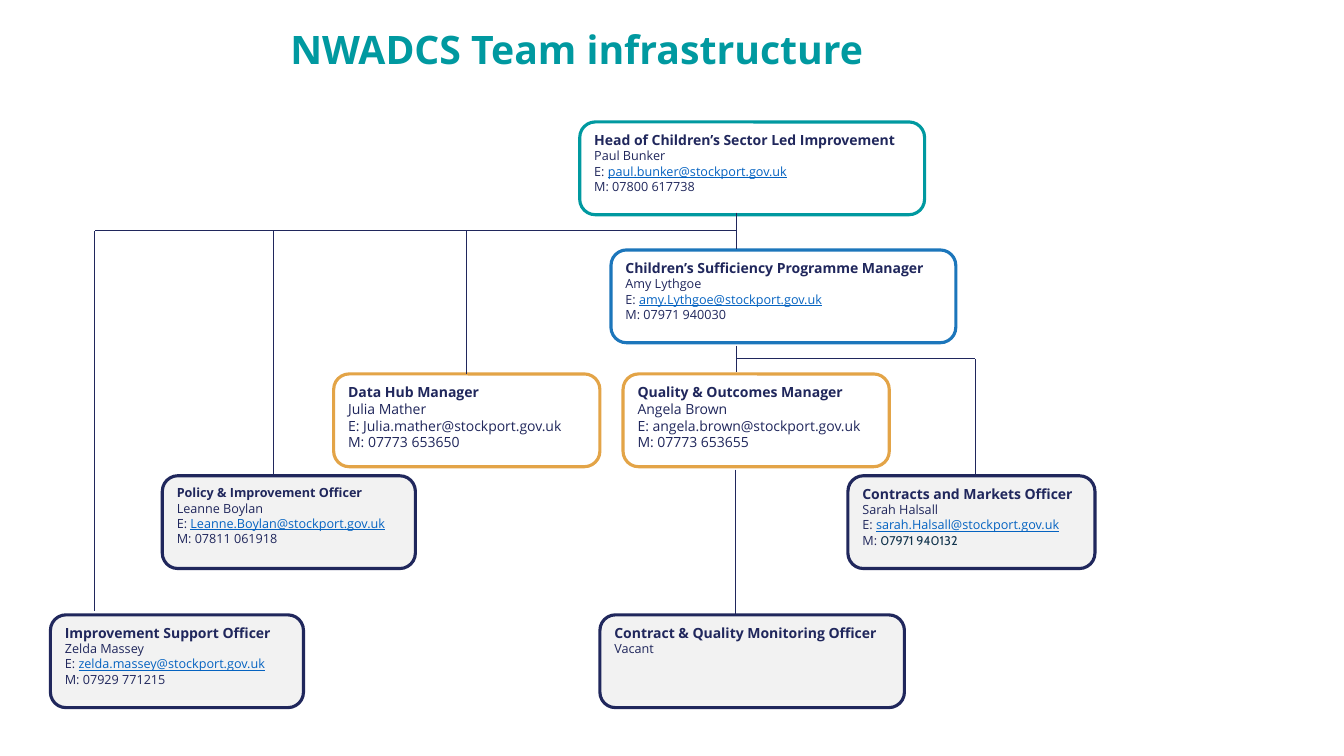
from pptx import Presentation
from pptx.dml.color import RGBColor
from pptx.enum.shapes import MSO_CONNECTOR, MSO_SHAPE
from pptx.enum.text import MSO_ANCHOR, MSO_AUTO_SIZE, PP_ALIGN
from pptx.util import Inches, Pt
from lxml.etree import SubElement
from pptx.oxml.ns import qn

COLORS = {
    "teal": "0099A0", "blue": "1C76BB", "amber": "E3A447", "navy": "20275C",
    "white": "FFFFFF", "grey": "F2F2F2", "link": "0563C1", "ink": "12344D",
}
FONT = "Open Sans"

# Chart levels and sizes in inches
ROWS = {"head": 1.21, "programme": 2.48, "manager": 3.71, "officer": 4.72, "support": 6.1}
CARD_HEIGHT = 0.92
TRUNK, UPPER_BUS, LOWER_BUS = 7.3, 2.29, 3.56

# row, left, width, outline, fill, role size, detail size, role, details;
# a detail is a list of (text, style) spans
CARDS = [
    ("head", 5.75, 3.42, "teal", "white", 10, 9, "Head of Children’s Sector Led Improvement",
     [[("Paul Bunker", "")], [("E: ", ""), ("paul.bunker@stockport.gov.uk", "link")],
      [("M: 07800 617738", "")]]),
    ("officer", 1.61, 2.51, "navy", "grey", 9, 9, "Policy & Improvement Officer",
     [[("Leanne Boylan", "")], [("E: ", ""), ("Leanne.Boylan@stockport.gov.uk", "link")],
      [("M: 07811 061918", "")]]),
    ("support", 0.5, 2.51, "navy", "grey", 10, 9, "Improvement Support Officer",
     [[("Zelda Massey", "")], [("E: ", ""), ("zelda.massey@stockport.gov.uk", "link")],
      [("M: 07929 771215", "")]]),
    ("programme", 6.06, 3.42, "blue", "white", 10, 9, "Children’s Sufficiency Programme Manager",
     [[("Amy Lythgoe", "")], [("E: ", ""), ("amy.Lythgoe@stockport.gov.uk", "link")],
      [("M: 07971 940030", "")]]),
    ("manager", 3.31, 2.64, "amber", "white", 10, 10, "Data Hub Manager",
     [[("Julia Mather", "")], [("E: Julia.mather@stockport.gov.uk", "")],
      [("M: 07773 653650", "")]]),
    ("officer", 8.41, 2.45, "navy", "grey", 10, 9, "Contracts and Markets Officer",
     [[("Sarah Halsall", "")], [("E: ", ""), ("sarah.Halsall@stockport.gov.uk", "link")],
      [("M: ", ""), ("07971 940132", "cabin")]]),
    ("manager", 6.18, 2.64, "amber", "white", 10, 10, "Quality & Outcomes Manager",
     [[("Angela Brown", "")], [("E: angela.brown@stockport.gov.uk", "")],
      [("M: 07773 653655", "")]]),
    ("support", 5.95, 3.02, "navy", "grey", 10, 9, "Contract & Quality Monitoring Officer",
     [[("Vacant", "")]]),
]


def color(name):
    return RGBColor.from_string(COLORS[name])


def style_para(para, size, tone, bold=False):
    para.alignment = PP_ALIGN.LEFT
    font = para.font
    font.name, font.size, font.bold = FONT, Pt(size), bold
    font.color.rgb = color(tone)


def add_title(page, left, top, width, height):
    title = page.shapes.title
    title.left, title.top, title.width, title.height = map(Inches, (left, top, width, height))
    frame = title.text_frame
    frame.text = "NWADCS Team infrastructure"
    frame.word_wrap = True
    frame.auto_size = MSO_AUTO_SIZE.NONE
    frame.vertical_anchor = MSO_ANCHOR.TOP
    style_para(frame.paragraphs[0], 28, "teal", bold=True)


def add_card(page, row, left, width, outline, fill, role_size, detail_size, role, details):
    card = page.shapes.add_shape(MSO_SHAPE.ROUNDED_RECTANGLE, Inches(left), Inches(ROWS[row]),
                                 Inches(width), Inches(CARD_HEIGHT))
    card.shadow.inherit = False
    card.fill.solid()
    card.fill.fore_color.rgb = color(fill)
    card.line.color.rgb = color(outline)
    card.line.width = Pt(2.25)
    frame = card.text_frame
    frame.word_wrap = True
    frame.vertical_anchor = MSO_ANCHOR.TOP
    para = frame.paragraphs[0]
    para.add_run().text = role
    style_para(para, role_size, "navy", bold=True)
    for spans in details:
        para = frame.add_paragraph()
        style_para(para, detail_size, "navy")
        for text, style in spans:
            span = para.add_run()
            span.text = text
            if style == "link":
                span.font.color.rgb = color("link")
                span.font.underline = True
            elif style == "cabin":
                span.font.name = "Cabin"
                span.font.color.rgb = color("ink")
    return card


def add_line(page, x1, y1, x2, y2):
    line = page.shapes.add_connector(MSO_CONNECTOR.STRAIGHT, *map(Inches, (x1, y1, x2, y2)))
    line.line.color.rgb = color("navy")
    line.line.width = Pt(0.5)
    SubElement(line._element.spPr, qn("a:effectLst"))
    return line


def add_reporting_lines(page, data_hub):
    # Trunk between the levels
    add_line(page, TRUNK, 2.11, TRUNK, 2.47)
    add_line(page, TRUNK, 3.43, TRUNK, 3.69)
    add_line(page, 7.29, 4.66, 7.29, ROWS["support"])
    # Upper branch
    add_line(page, TRUNK, UPPER_BUS, 0.94, UPPER_BUS)
    add_line(page, 0.94, 6.06, 0.94, UPPER_BUS)
    add_line(page, 2.71, ROWS["officer"], 2.71, UPPER_BUS)
    add_line(page, 4.63, ROWS["manager"], 4.63, UPPER_BUS).begin_connect(data_hub, 0)
    # Lower branch
    add_line(page, 9.67, LOWER_BUS, TRUNK, LOWER_BUS)
    add_line(page, 9.67, ROWS["officer"], 9.67, LOWER_BUS)


def main():
    deck = Presentation()
    deck.slide_width, deck.slide_height = Inches(13.33), Inches(7.5)
    page = deck.slides.add_slide(deck.slide_layouts[5])
    add_title(page, 2.78, 0.2, 8.22, 0.57)
    cards = {card[7]: add_card(page, *card) for card in CARDS}
    add_reporting_lines(page, cards["Data Hub Manager"])
    deck.save("out.pptx")


if __name__ == "__main__":
    main()
